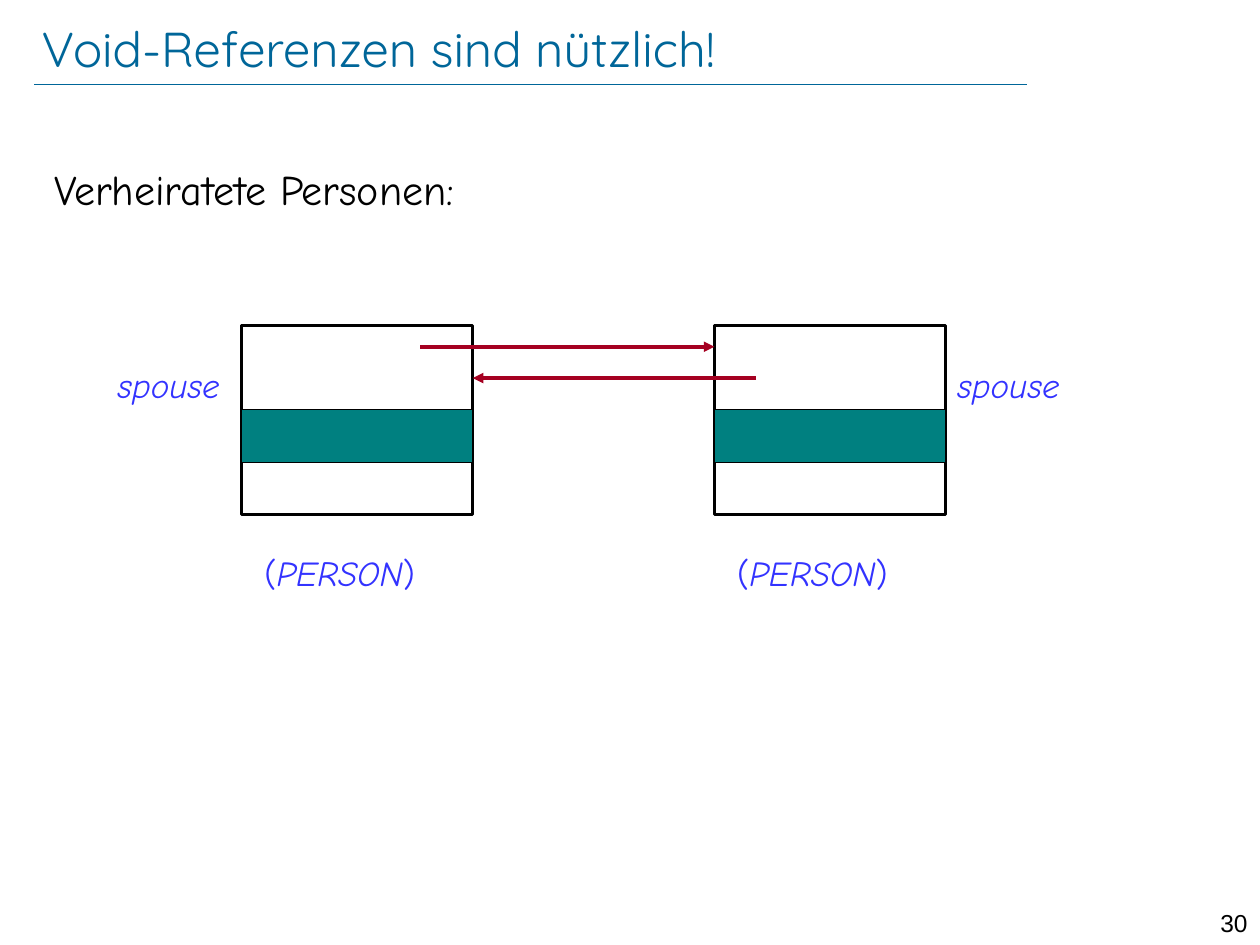
from lxml.etree import SubElement
from pptx import Presentation
from pptx.dml.color import RGBColor
from pptx.enum.shapes import MSO_CONNECTOR as Link, MSO_SHAPE as Shape
from pptx.enum.text import MSO_ANCHOR as Anchor, PP_ALIGN as Align
from pptx.oxml.ns import qn
from pptx.util import Cm, Pt

COLORS = {"title": "006699", "text": "000000", "label": "3333FF",
          "band": "008080", "arrow": "A50021"}
BODY = "Comic Neue"


def color(name):
    return RGBColor.from_string(COLORS[name])


def style(run, font, size, tone, italic=False):
    run.font.name = font
    run.font.size = Pt(size)
    run.font.color.rgb = color(tone)
    run.font.italic = italic


def add_title(slide, text):
    title = slide.shapes.title
    title.left, title.top = Cm(0.84), Cm(0.38)
    title.width, title.height = Cm(20.88), Cm(1.17)
    frame = title.text_frame
    frame.margin_left = frame.margin_right = 0
    frame.margin_top = frame.margin_bottom = 0
    frame.vertical_anchor = Anchor.MIDDLE
    frame.text = text
    line = frame.paragraphs[0]
    line.alignment = Align.LEFT
    style(line.runs[0], "Quicksand", 28, "title")


def add_text(slide, x, y, wide, high, parts, size=20, tone="label",
             font=BODY, align=Align.LEFT):
    """Place one line of text; parts are (text, italic) pairs."""
    box = slide.shapes.add_textbox(Cm(x), Cm(y), Cm(wide), Cm(high))
    box.text_frame.word_wrap = True
    line = box.text_frame.paragraphs[0]
    line.alignment = align
    for text, italic in parts:
        run = line.add_run()
        run.text = text
        style(run, font, size, tone, italic)


def add_box(slide, x, y, wide, high, width, fill=None):
    box = slide.shapes.add_shape(Shape.RECTANGLE, Cm(x), Cm(y), Cm(wide), Cm(high))
    box.shadow.inherit = False
    if fill:
        box.fill.solid()
        box.fill.fore_color.rgb = color(fill)
    else:
        box.fill.background()
    box.line.color.rgb = color("text")
    box.line.width = Pt(width)


def add_line(slide, start, end, y, width, tone, arrow=False):
    line = slide.shapes.add_connector(Link.STRAIGHT, Cm(start), Cm(y), Cm(end), Cm(y))
    line.line.color.rgb = color(tone)
    line.line.width = Pt(width)
    if arrow:
        SubElement(line.line._get_or_add_ln(), qn("a:tailEnd"), type="triangle")
    SubElement(line._element.spPr, qn("a:effectLst"))


def add_person(slide, x):
    """Draw an object with its coloured field and its class below."""
    add_box(slide, x, 6.56, 4.66, 3.81, 2)
    add_box(slide, x, 8.26, 4.66, 1.06, 0.75, "band")
    add_text(slide, x + 0.21, 11, 4.45, 1.09,
             [("(", False), ("PERSON", True), (")", False)])


def main():
    deck = Presentation()
    deck.slide_width, deck.slide_height = Cm(25.4), Cm(19.05)
    slide = deck.slides.add_slide(deck.slide_layouts[5])

    # Header and page number
    add_line(slide, 0.69, 20.7, 1.7, 0.25, "title")
    add_title(slide, "Void-Referenzen sind nützlich!")
    add_text(slide, 24, 18.19, 1.4, 0.61, [("30", False)], 14, "text",
             "Arial", Align.RIGHT)

    # Lead line
    add_text(slide, 0.84, 3.18, 23.7, 1.27,
             [("Verheiratete Personen:", False)], 24, "text")

    # Two persons and their field names
    for x, label in ((4.87, 2.12), (14.4, 19.05)):
        add_person(slide, x)
        add_text(slide, label, 7.2, 3.39, 1.09, [("spouse", True)])

    # References in both directions
    add_line(slide, 8.47, 14.4, 6.99, 2, "arrow", True)
    add_line(slide, 15.24, 9.53, 7.62, 2, "arrow", True)

    deck.save("out.pptx")


if __name__ == "__main__":
    main()
